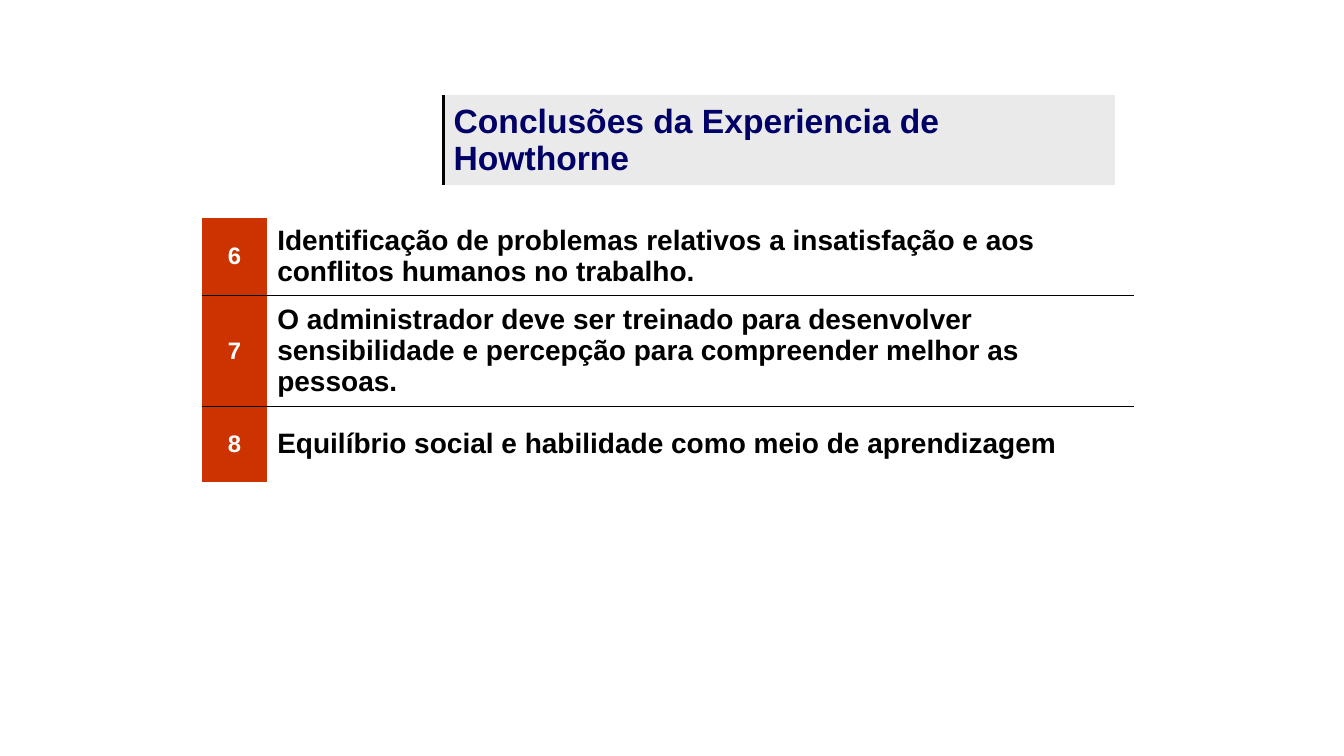
from dataclasses import dataclass
from typing import Optional, Sequence

import pptx
import pptx.dml.color
import pptx.enum.text
import pptx.oxml
import pptx.oxml.ns
import pptx.util

Inches = pptx.util.Inches
PP_ALIGN = pptx.enum.text.PP_ALIGN
NO_TABLE_STYLE = "{2D5ABB26-0587-4C30-8999-92F81FD0307C}"


@dataclass(frozen=True)
class Theme:
    font: str = "Arial"
    title_color: str = "000066"
    title_band: str = "EAEAEA"
    number_color: str = "FFFFFF"
    number_fill: str = "CC3300"
    text_color: str = "000000"
    rule_color: str = "000000"
    title_size: float = 24
    number_size: float = 17
    text_size: float = 20
    title_rule: float = 2.25
    row_rule: float = 1


@dataclass(frozen=True)
class Conclusion:
    number: int
    text: str
    height: float


THEME = Theme()
TITLE = "Conclusões da Experiencia de Howthorne"
CONCLUSIONS = (
    Conclusion(6, "Identificação de problemas relativos a insatisfação e aos "
                  "conflitos humanos no trabalho.", 0.77),
    Conclusion(7, "O administrador deve ser treinado para desenvolver sensibilidade "
                  "e percepção para compreender melhor as pessoas.", 1.1),
    Conclusion(8, "Equilíbrio social e habilidade como meio de aprendizagem", 0.75),
)


def rgb(color: str) -> pptx.dml.color.RGBColor:
    return pptx.dml.color.RGBColor.from_string(color)


def write_cell(cell, text: str, *, size: float, color: str,
               fill: Optional[str] = None, align=PP_ALIGN.LEFT) -> None:
    cell.vertical_anchor = pptx.enum.text.MSO_ANCHOR.MIDDLE
    if fill:
        cell.fill.solid()
        cell.fill.fore_color.rgb = rgb(fill)
    else:
        cell.fill.background()
    paragraph = cell.text_frame.paragraphs[0]
    paragraph.alignment = align
    run = paragraph.add_run()
    run.text = text
    run.font.name = THEME.font
    run.font.size = pptx.util.Pt(size)
    run.font.bold = True
    run.font.color.rgb = rgb(color)


def add_cell_rule(cell, edge: str, weight: float) -> None:
    """Draw a border on one edge of a cell: lnL, lnT or lnB."""
    rule = pptx.oxml.parse_xml(
        f'<a:{edge} {pptx.oxml.ns.nsdecls("a")} w="{pptx.util.Pt(weight)}"><a:solidFill>'
        f'<a:srgbClr val="{THEME.rule_color}"/></a:solidFill></a:{edge}>')
    cell._tc.get_or_add_tcPr().insert(0, rule)


def add_plain_table(slide, left: float, top: float,
                    widths: Sequence[float], heights: Sequence[float]):
    """Add a table without style, with the given column widths and row heights."""
    table = slide.shapes.add_table(
        len(heights), len(widths), Inches(left), Inches(top),
        Inches(sum(widths)), Inches(sum(heights))).table
    table.first_row = table.horz_banding = False
    table._tbl.tblPr.find(pptx.oxml.ns.qn("a:tableStyleId")).text = NO_TABLE_STYLE
    for column, width in zip(table.columns, widths):
        column.width = Inches(width)
    for row, height in zip(table.rows, heights):
        row.height = Inches(height)
    return table


def add_title(slide) -> None:
    title = add_plain_table(slide, 4.4, 0.94, [6.66], [0.9]).cell(0, 0)
    write_cell(title, TITLE, size=THEME.title_size, color=THEME.title_color,
               fill=THEME.title_band)
    add_cell_rule(title, "lnL", THEME.title_rule)


def add_conclusions(slide) -> None:
    table = add_plain_table(slide, 2, 2.16, [0.65, 8.6],
                            [item.height for item in CONCLUSIONS])
    last = len(CONCLUSIONS) - 1
    for index, item in enumerate(CONCLUSIONS):
        number, statement = table.rows[index].cells
        write_cell(number, str(item.number), size=THEME.number_size,
                   color=THEME.number_color, fill=THEME.number_fill,
                   align=PP_ALIGN.CENTER)
        write_cell(statement, item.text, size=THEME.text_size, color=THEME.text_color)
        for cell in (number, statement):
            if index < last:
                add_cell_rule(cell, "lnB", THEME.row_rule)
            if index > 0:
                add_cell_rule(cell, "lnT", THEME.row_rule)


def main() -> None:
    presentation = pptx.Presentation()
    presentation.slide_width, presentation.slide_height = Inches(13.33), Inches(7.5)
    slide = presentation.slides.add_slide(
        presentation.slide_layouts.get_by_name("Blank"))
    add_title(slide)
    add_conclusions(slide)
    presentation.save("out.pptx")


if __name__ == "__main__":
    main()
